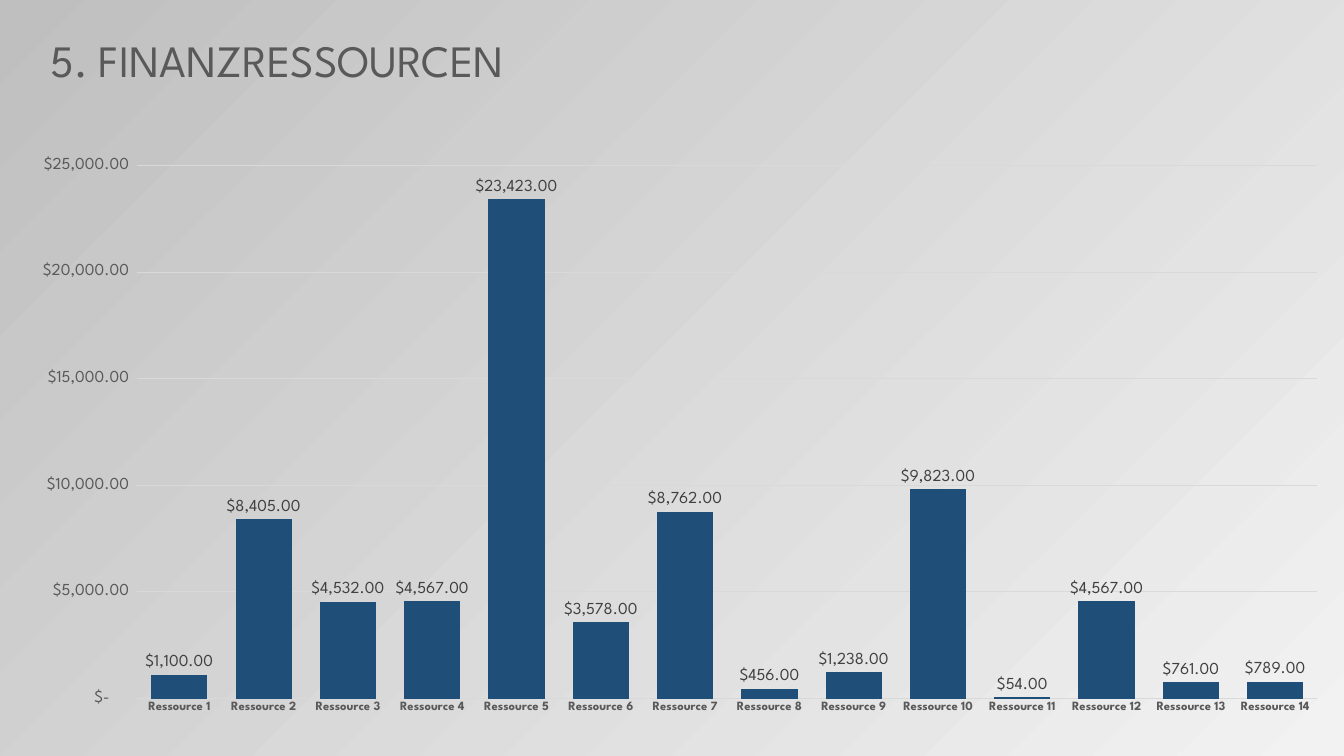
from dataclasses import dataclass

from pptx import Presentation
from pptx.chart.data import CategoryChartData
from pptx.dml.color import RGBColor
from pptx.enum.chart import XL_CHART_TYPE, XL_LABEL_POSITION, XL_TICK_MARK
from pptx.enum.text import MSO_ANCHOR, PP_ALIGN
from pptx.util import Inches, Pt

RESOURCE_COSTS = [1100, 8405, 4532, 4567, 23423, 3578, 8762,
                  456, 1238, 9823, 54, 4567, 761, 789]
ACCOUNTING = r'_("$"* #,##0.00_);_("$"* \(#,##0.00\);_("$"* "-"??_);_(@_)'


@dataclass(frozen=True)
class Theme:
    font: str = "League Spartan"
    text: str = "595959"
    label: str = "404040"
    bar: str = "1F4E79"
    grid: str = "D9D9D9"
    light: str = "F2F2F2"
    dark: str = "BFBFBF"
    title_size: int = 32
    value_size: int = 12
    category_size: int = 9
    line_width: float = 0.75


class SlideBuilder:
    def __init__(self, slide, theme):
        self.s = slide
        self.theme = theme

    def style_font(self, font, size, color, bold=False):
        font.name = self.theme.font
        font.size = Pt(size)
        font.bold = bold
        font.color.rgb = RGBColor.from_string(color)

    def style_line(self, line):
        line.width = Pt(self.theme.line_width)
        line.color.rgb = RGBColor.from_string(self.theme.grid)

    def background(self):
        fill = self.s.background.fill
        fill.gradient()
        fill.gradient_angle = 135
        for stop, color in zip(fill.gradient_stops, (self.theme.light, self.theme.dark)):
            stop.color.rgb = RGBColor.from_string(color)

    def title(self, text, left, top, width, height):
        sp = self.s.shapes.title
        sp.left, sp.top = Inches(left), Inches(top)
        sp.width, sp.height = Inches(width), Inches(height)
        tf = sp.text_frame
        tf.text = text
        tf.word_wrap = False
        tf.vertical_anchor = MSO_ANCHOR.TOP
        p = tf.paragraphs[0]
        p.alignment = PP_ALIGN.LEFT
        p.line_spacing = 1.0
        self.style_font(p.font, self.theme.title_size, self.theme.text)

    def column_chart(self, categories, values, left, top, width, height):
        theme = self.theme
        data = CategoryChartData()
        data.categories = categories
        data.add_series("Series 1", values)
        chart = self.s.shapes.add_chart(
            XL_CHART_TYPE.COLUMN_CLUSTERED, Inches(left), Inches(top),
            Inches(width), Inches(height), data).chart
        chart.has_legend = False
        chart.has_title = False
        chart.font.name = theme.font

        plot = chart.plots[0]
        plot.gap_width = 50
        plot.vary_by_categories = False
        fill = plot.series[0].format.fill
        fill.solid()
        fill.fore_color.rgb = RGBColor.from_string(theme.bar)

        plot.has_data_labels = True
        labels = plot.data_labels
        labels.show_value = True
        labels.position = XL_LABEL_POSITION.OUTSIDE_END
        self.style_font(labels.font, theme.value_size, theme.label)

        category_axis, value_axis = chart.category_axis, chart.value_axis
        for axis in (category_axis, value_axis):
            axis.major_tick_mark = axis.minor_tick_mark = XL_TICK_MARK.NONE
        self.style_font(category_axis.tick_labels.font, theme.category_size,
                        theme.text, bold=True)
        self.style_line(category_axis.format.line)

        value_axis.minimum_scale, value_axis.maximum_scale = 0, 25000
        value_axis.major_unit = 5000
        value_axis.format.line.fill.background()
        self.style_line(value_axis.major_gridlines.format.line)
        self.style_font(value_axis.tick_labels.font, theme.value_size, theme.text)

        for numbers in (labels, value_axis.tick_labels):
            numbers.number_format = ACCOUNTING
            numbers.number_format_is_linked = False


def main():
    prs = Presentation()
    prs.slide_width, prs.slide_height = Inches(13.33), Inches(7.5)
    title_only = prs.slide_layouts[5]
    builder = SlideBuilder(prs.slides.add_slide(title_only), Theme())
    builder.background()
    categories = [f"Ressource {n}" for n in range(1, len(RESOURCE_COSTS) + 1)]
    builder.column_chart(categories, RESOURCE_COSTS, 0.12, 1.45, 13.21, 5.75)
    builder.title("5. FINANZRESSOURCEN", 0.4, 0.27, 5.66, 0.64)
    prs.save("out.pptx")


if __name__ == "__main__":
    main()
